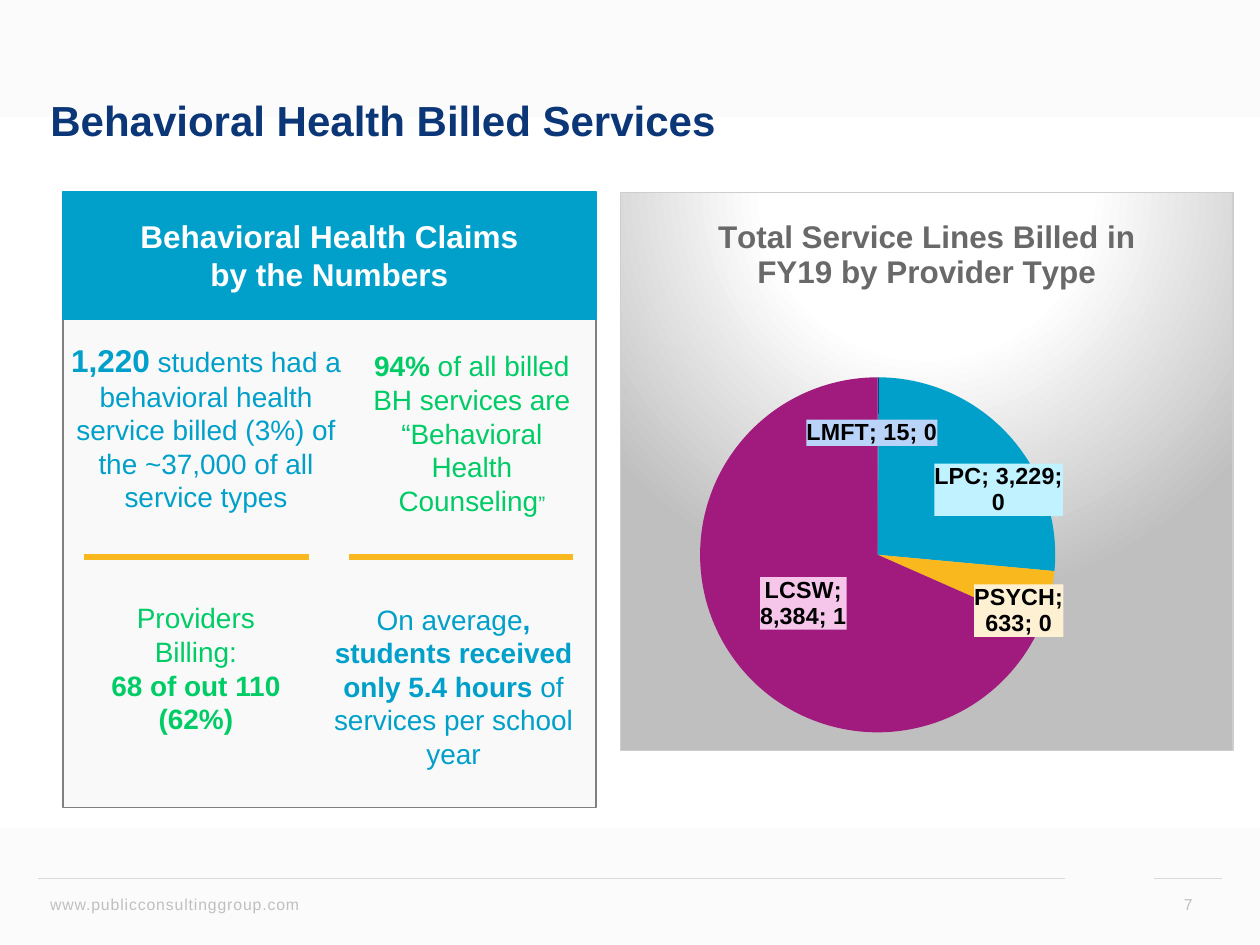
from dataclasses import dataclass

from lxml import etree
from pptx import Presentation
from pptx import util as u
from pptx.chart import data as cd
from pptx.dml import color
from pptx.enum import chart as ch
from pptx.enum import shapes, text
from pptx.oxml import ns, parse_xml

Inches = u.Inches
CENTER = text.PP_ALIGN.CENTER


@dataclass(frozen=True)
class Theme:
    font: str = "Arial"
    navy: str = "0B3677"
    blue: str = "00A0CA"
    green: str = "00CC66"
    gold: str = "FAB81F"
    plum: str = "A11B7E"
    white: str = "FFFFFF"
    black: str = "000000"
    band: str = "FBFBFB"
    panel: str = "F9F9F9"
    frame: str = "808080"
    rule: str = "D9D9D9"
    muted: str = "BFBFBF"
    chart_title: str = "696969"
    chart_edge: str = "CECECE"
    title: float = 24
    heading: float = 18
    body: float = 16
    quote: float = 12
    label: float = 13.3
    small: float = 9


T = Theme()


def rgb(value):
    return color.RGBColor.from_string(value)


def style(font, size, tint, bold=False):
    font.name, font.size, font.bold = T.font, u.Pt(size), bold
    font.color.rgb = rgb(tint)


def add_rect(s, box, fill, line):
    sp = s.shapes.add_shape(shapes.MSO_SHAPE.RECTANGLE, *map(Inches, box))
    sp.shadow.inherit = False
    sp.fill.solid()
    sp.fill.fore_color.rgb = rgb(fill)
    sp.line.color.rgb = rgb(line)
    sp.line.width = u.Pt(1)
    return sp


def add_rule(s, x, y, width, tint, weight):
    c = s.shapes.add_connector(shapes.MSO_CONNECTOR.STRAIGHT, Inches(x), Inches(y),
                               Inches(x + width), Inches(y))
    c.line.color.rgb = rgb(tint)
    c.line.width = u.Pt(weight)
    etree.SubElement(c._element.spPr, ns.qn("a:effectLst"))


def add_text(s, box, paragraphs, size, tint, align=CENTER):
    sp = s.shapes.add_textbox(*map(Inches, box))
    tf = sp.text_frame
    tf.word_wrap = True
    for i, runs in enumerate(paragraphs):
        p = tf.paragraphs[0] if i == 0 else tf.add_paragraph()
        p.alignment = align
        style(p.font, size, tint)
        for words, bold, run_size in runs:
            r = p.add_run()
            r.text = words
            style(r.font, run_size, tint, bold)
    return sp


def add_bands(s, width, height, depth):
    for top, turn in ((0, 0), (height - depth, 180)):
        sp = add_rect(s, (0, top, width, depth), T.band, T.band)
        sp.line.fill.background()
        sp.fill.gradient()
        sp.fill.gradient_angle = 270
        for stop, tint in zip(sp.fill.gradient_stops, (T.band, T.white)):
            stop.color.rgb = rgb(tint)
        sp.rotation = turn


def add_title(s, box):
    sp = s.shapes.title
    s.shapes._spTree.append(sp._element)
    sp.left, sp.top, sp.width, sp.height = map(Inches, box)
    tf = sp.text_frame
    tf.text = "Behavioral Health Billed Services"
    tf.vertical_anchor = text.MSO_ANCHOR.MIDDLE
    p = tf.paragraphs[0]
    p.alignment = text.PP_ALIGN.LEFT
    p.line_spacing = 0.9
    style(p.font, T.title, T.navy, True)


def add_footer(s, x, y, width):
    number_w = 0.54
    number_x = x + width - number_w
    add_rule(s, x, y, 8.15, T.rule, 0.5)
    add_rule(s, number_x, y, number_w, T.rule, 0.5)
    for box, words, align in (
            ((x, y + 0.08, 2.9, 0.25), "www.publicconsultinggroup.com", text.PP_ALIGN.LEFT),
            ((number_x, y + 0.08, number_w, 0.27), "7", CENTER)):
        sp = add_text(s, box, [[(words, False, T.small)]], T.small, T.muted, align)
        for r in sp.text_frame.paragraphs[0].runs:
            r.font._element.set("spc", "50")


def add_claims(s, x, y, width, height):
    head = 1.01
    add_rect(s, (x, y + head, width, height - head), T.panel, T.frame)
    sp = add_rect(s, (x, y, width, head), T.blue, T.blue)
    tf = sp.text_frame
    tf.text = "Behavioral Health Claims\nby the Numbers"
    tf.vertical_anchor = text.MSO_ANCHOR.MIDDLE
    for p in tf.paragraphs:
        p.alignment = CENTER
        style(p.font, T.heading, T.white, True)

    facts = (
        ((-0.06, 1.14, 2.39, 1.48), T.blue,
         [[("1,220", True, T.heading), (" ", True, T.body),
           ("students had a behavioral health service billed (3%) of the ~37,000 "
            "of all service types", False, T.body)]]),
        ((2.27, 1.2, 1.95, 1.45), T.green,
         [[("94% ", True, T.body),
           ("of all billed BH services are “Behavioral Health Counseling", False, T.body),
           ("”", False, T.quote)]]),
        ((0.14, 3.2, 1.83, 1.18), T.green,
         [[("Providers Billing:", False, T.body)],
          [("68 of out 110 (62%)", True, T.body)]]),
        ((2.03, 3.21, 2.14, 1.45), T.blue,
         [[("On average", False, T.body),
           (", students received only 5.4 hours ", True, T.body),
           ("of services per school year", False, T.body)]]),
    )
    for (dx, dy, w, h), tint, paragraphs in facts:
        add_text(s, (x + dx, y + dy, w, h), paragraphs, T.body, tint)
    for dx in (0.17, 2.27):
        add_rule(s, x + dx, y + 2.9, 1.78, T.gold, 3)


def manual_layout(x, y, size=None):
    inner = '<c:layoutTarget val="inner"/><c:xMode val="edge"/><c:yMode val="edge"/>' if size else ""
    extent = f'<c:w val="{size[0]}"/><c:h val="{size[1]}"/>' if size else ""
    return (f'<c:layout {ns.nsdecls("c")}><c:manualLayout>{inner}<c:x val="{x}"/>'
            f'<c:y val="{y}"/>{extent}</c:manualLayout></c:layout>')


def point_label(i, shift, fill):
    return parse_xml(
        f'<c:dLbl {ns.nsdecls("c", "a")}><c:idx val="{i}"/>{manual_layout(*shift)}'
        '<c:numFmt formatCode="#,##0" sourceLinked="0"/>'
        f'<c:spPr><a:solidFill><a:srgbClr val="{fill}"/></a:solidFill></c:spPr>'
        f'<c:txPr><a:bodyPr/><a:p><a:pPr><a:defRPr sz="{round(T.label * 100)}" b="1">'
        f'<a:solidFill><a:srgbClr val="{T.black}"/></a:solidFill>'
        f'<a:latin typeface="{T.font}"/></a:defRPr></a:pPr></a:p></c:txPr>'
        '<c:dLblPos val="ctr"/><c:showLegendKey val="0"/><c:showVal val="1"/>'
        '<c:showCatName val="1"/><c:showSerName val="0"/><c:showPercent val="1"/>'
        '<c:showBubbleSize val="0"/><c:separator>; </c:separator></c:dLbl>')


def add_provider_chart(s, box):
    providers = (
        ("LMFT", 15, T.navy, "BAD3F8", (-0.01, -0.06)),
        ("LPC", 3229, T.blue, "C1F2FF", (0.09, -0.01)),
        ("PSYCH", 633, T.gold, "FEF1D3", (0.09, 0.06)),
        ("LCSW", 8384, T.plum, "F5C5EA", (0, 0)),
    )
    data = cd.CategoryChartData(number_format="#,##0")
    data.categories = [provider[0] for provider in providers]
    data.add_series("Series 1", [provider[1] for provider in providers])
    chart = s.shapes.add_chart(ch.XL_CHART_TYPE.PIE, *map(Inches, box), data).chart
    style(chart.font, 10, "3B3B3B")
    chart.has_legend = False
    tf = chart.chart_title.text_frame
    tf.text = "Total Service Lines Billed in FY19 by Provider Type"
    style(tf.paragraphs[0].font, T.heading, T.chart_title, True)

    plot = chart.plots[0]
    plot.vary_by_categories = True
    series = plot.series[0]
    labels = series.data_labels._element
    for i, (_, _, tint, label_fill, shift) in enumerate(providers):
        fill = series.points[i].format.fill
        fill.solid()
        fill.fore_color.rgb = rgb(tint)
        labels.insert(i, point_label(i, shift, label_fill))

    area = chart._chartSpace.chart.plotArea
    for old in area.findall(ns.qn("c:layout")):
        area.remove(old)
    area.insert(0, parse_xml(manual_layout(0.13, 0.33, (0.58, 0.64))))
    stops = "".join(f'<a:gs pos="{pos}"><a:srgbClr val="{tint}"/></a:gs>'
                    for pos, tint in ((0, T.white), (39000, T.white), (100000, T.muted)))
    chart._chartSpace.chart.addnext(parse_xml(
        f'<c:spPr {ns.nsdecls("c", "a")}><a:gradFill><a:gsLst>{stops}</a:gsLst>'
        '<a:path path="circle"><a:fillToRect l="50000" t="-80000" r="50000" b="180000"/>'
        f'</a:path></a:gradFill><a:ln w="{u.Pt(0.75)}"><a:solidFill>'
        f'<a:srgbClr val="{T.chart_edge}"/></a:solidFill></a:ln></c:spPr>'))


def main():
    prs = Presentation()
    prs.slide_width, prs.slide_height = Inches(10), Inches(7.5)
    s = prs.slides.add_slide(prs.slide_layouts[5])
    add_bands(s, 10, 7.5, 1.85)
    add_footer(s, 0.3, 6.97, 9.4)
    add_title(s, (0.3, 0.4, 9.37, 1.15))
    add_claims(s, 0.5, 1.52, 4.23, 4.89)
    add_provider_chart(s, (4.92, 1.52, 4.87, 4.44))
    prs.save("out.pptx")


if __name__ == "__main__":
    main()
